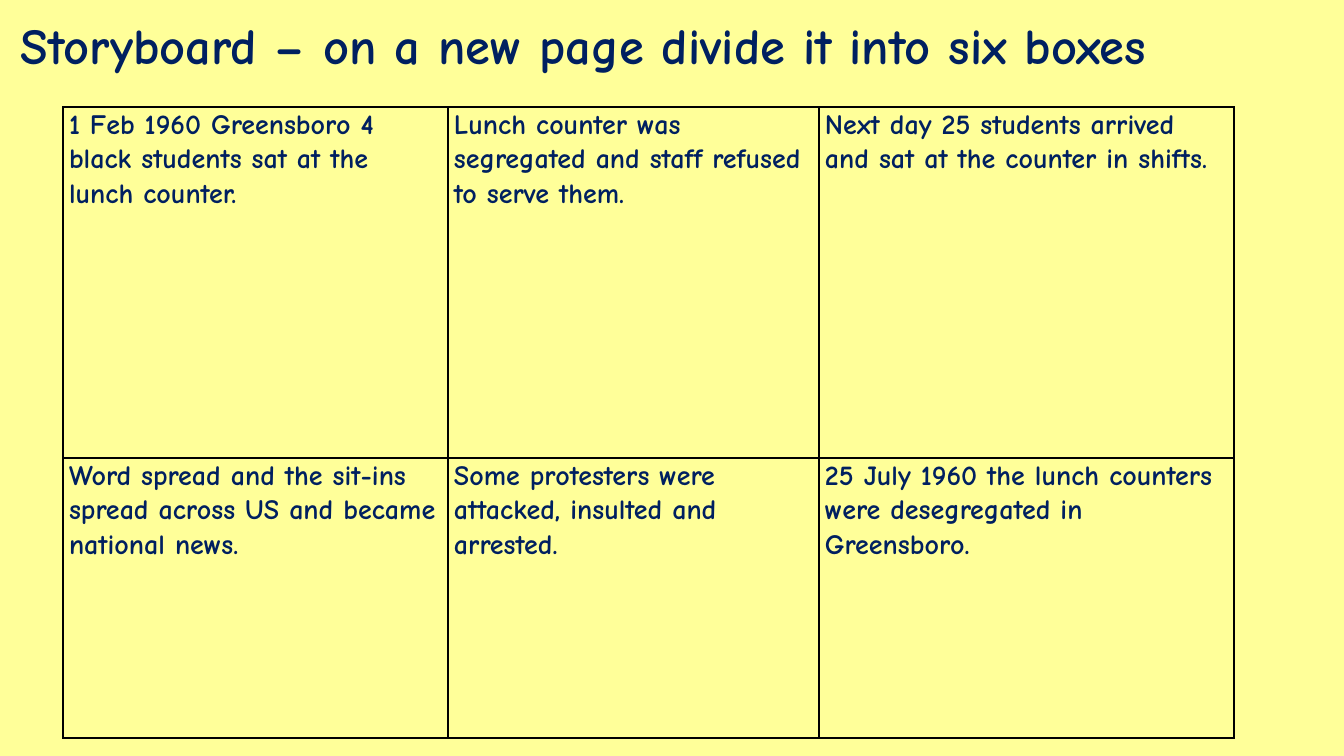
"""Build a storyboard slide: a title above a grid of six captioned boxes."""
from lxml import etree
from pptx import Presentation
from pptx import util as u
from pptx.dml.color import RGBColor
from pptx.enum import text
from pptx.oxml.ns import qn

TITLE = "Storyboard – on a new page divide it into six boxes"
BOXES = [
    ["1 Feb 1960 Greensboro 4 black students sat at the lunch counter.",
     "Lunch counter was segregated and staff refused to serve them.",
     "Next day 25 students arrived and sat at the counter in shifts."],
    ["Word spread and the sit-ins spread across US and became national news.",
     "Some protesters were attacked, insulted and arrested.",
     "25 July 1960 the lunch counters were desegregated in Greensboro."],
]
SLIDE = (1344, 756)
TITLE_BOX = (11, -25, 1344, 146)
GRID_LEFT, GRID_TOP = 63, 107
COLS = [385, 371, 415]
ROWS = [351, 280]
CELL_INSET = 6

FONT = "Comic Neue"
NAVY = RGBColor(0x00, 0x20, 0x60)
CREAM = RGBColor(0xFF, 0xFF, 0x99)
BLACK = RGBColor(0x00, 0x00, 0x00)


def px(n):
    return u.Emu(round(n * 914400 / 100.8))


def write(tf, content, size, spacing):
    tf.word_wrap = True
    p = tf.paragraphs[0]
    p.line_spacing = spacing
    r = p.add_run()
    r.text = content
    r.font.name, r.font.size, r.font.bold = FONT, u.Pt(size), True
    r.font.color.rgb = NAVY


def add_borders(cell, color, width):
    tc_pr = cell._tc.get_or_add_tcPr()
    for i, side in enumerate(("a:lnL", "a:lnR", "a:lnT", "a:lnB")):
        ln = etree.Element(qn(side), w=str(u.Pt(width)))
        fill = etree.SubElement(ln, qn("a:solidFill"))
        etree.SubElement(fill, qn("a:srgbClr"), val=str(color))
        tc_pr.insert(i, ln)


def main():
    prs = Presentation()
    prs.slide_width, prs.slide_height = map(px, SLIDE)
    s = prs.slides.add_slide(prs.slide_layouts[6])
    s.background.fill.solid()
    s.background.fill.fore_color.rgb = CREAM

    tf = s.shapes.add_textbox(*map(px, TITLE_BOX)).text_frame
    tf.vertical_anchor = text.MSO_ANCHOR.MIDDLE
    write(tf, TITLE, size=36, spacing=0.9)

    frame = (GRID_LEFT, GRID_TOP, sum(COLS), sum(ROWS))
    table = s.shapes.add_table(len(ROWS), len(COLS), *map(px, frame)).table
    table.first_row = table.horz_banding = False
    for col, width in zip(table.columns, COLS):
        col.width = px(width)
    for row, height, captions in zip(table.rows, ROWS, BOXES):
        row.height = px(height)
        for cell, caption in zip(row.cells, captions):
            cell.margin_left = cell.margin_right = px(CELL_INSET)
            cell.margin_top = cell.margin_bottom = 0
            cell.fill.background()
            add_borders(cell, BLACK, width=1)
            write(cell.text_frame, caption, size=20, spacing=1.07)

    prs.save("out.pptx")


if __name__ == "__main__":
    main()
